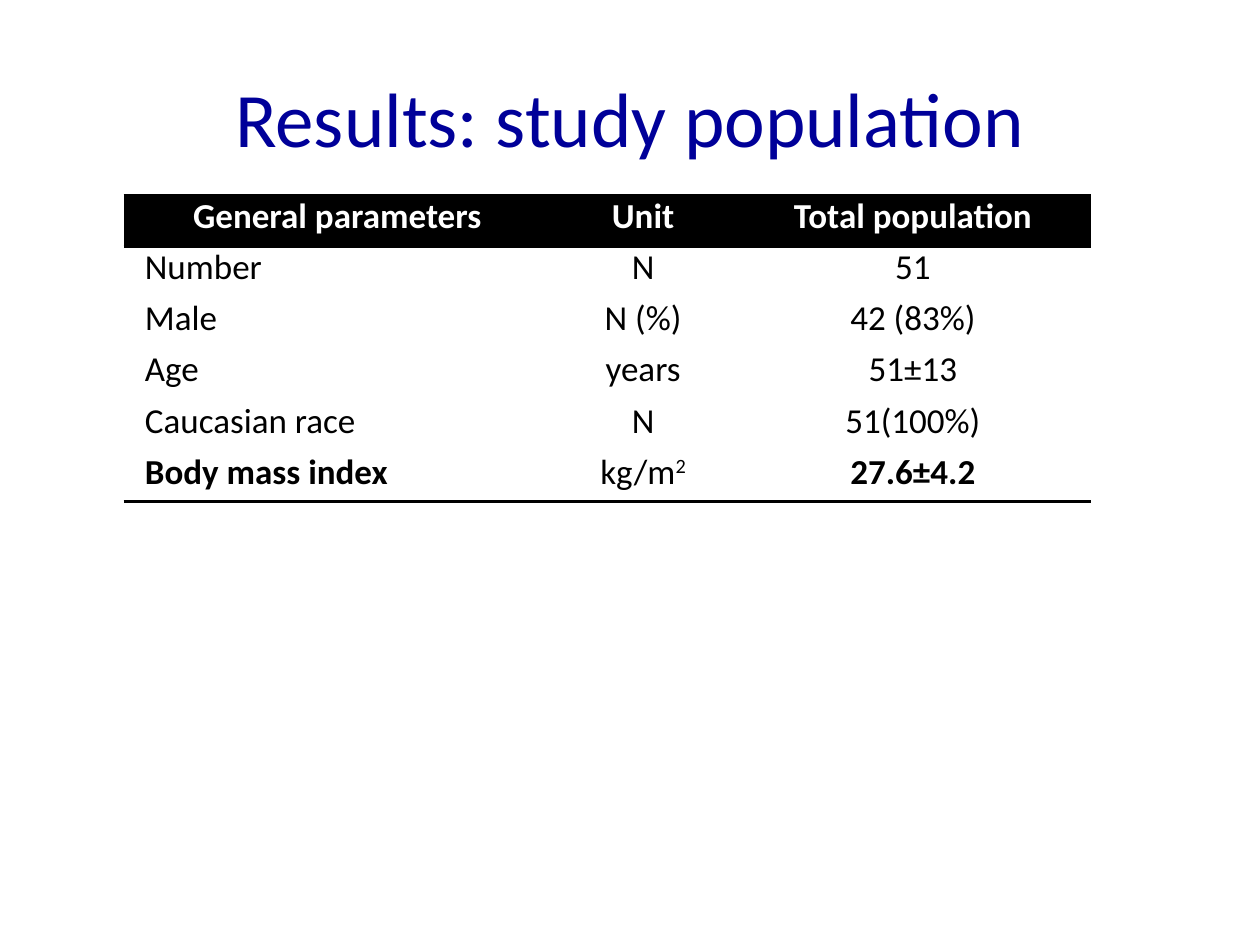
from lxml import etree
from pptx import Presentation
from pptx import util as u
from pptx.dml.color import RGBColor
from pptx.enum import text
from pptx.oxml.ns import qn

FONT = "Calibri"
BLACK, WHITE, NAVY = "000000", "FFFFFF", "000099"
NO_STYLE = "{2D5ABB26-0587-4C30-8999-92F81FD0307C}"
COLUMN_WIDTHS = (244.3, 105.2, 203.2)
ROW_HEIGHT = 29.2
ROWS = (
    ("General parameters", "Unit", "Total population"),
    ("Number", "N", "51"),
    ("Male", "N (%)", "42 (83%)"),
    ("Age", "years", "51±13"),
    ("Caucasian race", "N", "51(100%)"),
    ("Body mass index", "kg/m^2", "27.6±4.2"),
)
BOLD_VALUES = ("Body mass index", "27.6±4.2")


def colour(value):
    """Turn a hex string into a colour."""
    return RGBColor.from_string(value)


def style_font(font, size, value, bold=False):
    """Set face, size, colour and weight of a font."""
    font.name = FONT
    font.size = u.Pt(size)
    font.bold = bold
    font.color.rgb = colour(value)


def add_title(page, wording):
    """Place and format the slide title."""
    box = page.shapes.title
    box.left, box.top, box.width, box.height = map(u.Pt, (36, 21.6, 648, 90))
    box.text_frame.text = wording
    box.text_frame.vertical_anchor = text.MSO_ANCHOR.MIDDLE
    para = box.text_frame.paragraphs[0]
    para.alignment = text.PP_ALIGN.CENTER
    style_font(para.font, 44, NAVY)


def add_rule(cell, side):
    """Draw a black rule on the top (T) or bottom (B) of a cell."""
    line = etree.Element(qn(f"a:ln{side}"), w=str(u.Pt(2)))
    fill = etree.SubElement(line, qn("a:solidFill"))
    etree.SubElement(fill, qn("a:srgbClr"), val=BLACK)
    cell._tc.get_or_add_tcPr().insert(0, line)


def fill_cell(cell, wording, header, first):
    """Write one cell, raising whatever follows a caret."""
    cell.margin_left = cell.margin_right = u.Pt(5)
    cell.margin_top = cell.margin_bottom = 0
    cell.fill.solid()
    cell.fill.fore_color.rgb = colour(BLACK if header else WHITE)
    para = cell.text_frame.paragraphs[0]
    base, _, power = wording.partition("^")
    para.add_run().text = base
    if power:
        span = para.add_run()
        span.text = power
        span.font._element.set("baseline", "30000")
    if first and not header:
        para.alignment = text.PP_ALIGN.LEFT
        para._p.get_or_add_pPr().set("marL", str(u.Pt(7.2)))
    else:
        para.alignment = text.PP_ALIGN.CENTER
    style_font(para.font, 20, WHITE if header else BLACK,
               header or wording in BOLD_VALUES)


def add_population_table(page):
    """Build the table with ruled header and last row."""
    frame = page.shapes.add_table(
        len(ROWS), len(COLUMN_WIDTHS), u.Pt(70.6), u.Pt(111.6),
        u.Pt(sum(COLUMN_WIDTHS)), u.Pt(ROW_HEIGHT * len(ROWS)))
    table = frame.table
    table.horz_banding = False
    table._tbl.tblPr.find(qn("a:tableStyleId")).text = NO_STYLE
    for column, width in zip(table.columns, COLUMN_WIDTHS):
        column.width = u.Pt(width)
    for r, values in enumerate(ROWS):
        table.rows[r].height = u.Pt(ROW_HEIGHT)
        for c, wording in enumerate(values):
            cell = table.cell(r, c)
            fill_cell(cell, wording, header=r == 0, first=c == 0)
            if r in (0, len(ROWS) - 1):
                add_rule(cell, "B")
            if r == 0:
                add_rule(cell, "T")


def main():
    """Build and save the slide."""
    deck = Presentation()
    deck.slide_width, deck.slide_height = u.Pt(720), u.Pt(540)
    page = deck.slides.add_slide(deck.slide_layouts[5])
    add_title(page, "Results: study population")
    add_population_table(page)
    deck.save("out.pptx")


if __name__ == "__main__":
    main()
